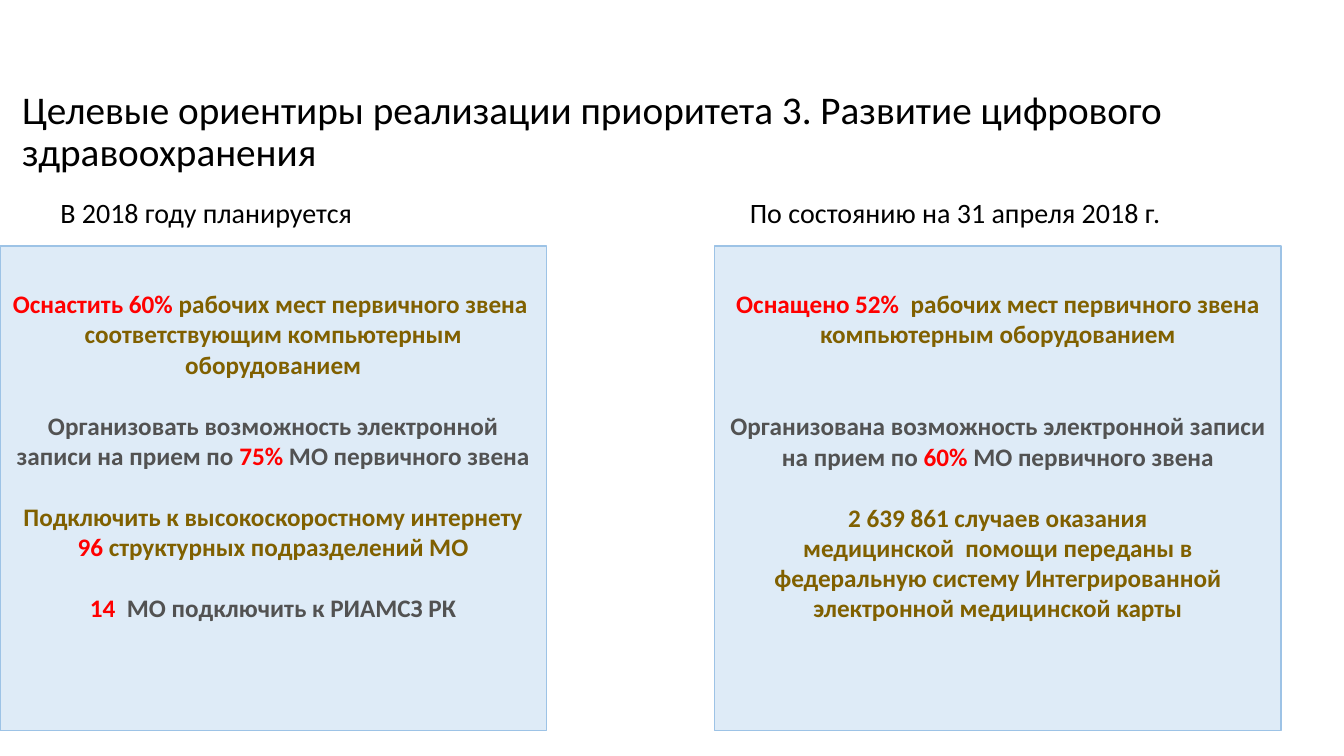
from dataclasses import dataclass
from lxml import etree
from pptx import Presentation
from pptx import util as u
from pptx.dml.color import RGBColor
from pptx.enum import shapes, text
from pptx.oxml import ns


@dataclass(frozen=True)
class Theme:
    font: str = "Calibri"
    black: str = "000000"
    red: str = "FF0000"
    gold: str = "806000"
    gray: str = "525252"
    fill: str = "DEEBF7"
    edge: str = "9DC3E6"
    head: int = 28
    label: int = 20
    body: int = 18


look = Theme()


def write(para, words, size=look.body, color=look.black, bold=False):
    run = para.add_run()
    run.text = words
    font = run.font
    font.name = look.font
    font.size = u.Pt(size)
    font.bold = bold
    font.color.rgb = RGBColor.from_string(color)


deck = Presentation()
deck.slide_width = u.Pt(960)
deck.slide_height = u.Pt(540)
slide = deck.slides.add_slide(deck.slide_layouts[5])

title = slide.shapes.title
title.left, title.top = u.Pt(8.6), u.Pt(64.8)
title.width, title.height = u.Pt(943.2), u.Pt(92.9)
frame = title.text_frame
frame.auto_size = text.MSO_AUTO_SIZE.NONE
frame.vertical_anchor = text.MSO_ANCHOR.TOP
frame.margin_top = u.Pt(0)
para = frame.paragraphs[0]
para.alignment = text.PP_ALIGN.LEFT
para.line_spacing = 0.9
write(para, "Целевые ориентиры реализации приоритета 3. Развитие цифрового здравоохранения",
      size=look.head)

label = slide.shapes.add_textbox(u.Pt(36), u.Pt(136.1), u.Pt(924), u.Pt(31.5))
label.text_frame.word_wrap = True
para = label.text_frame.paragraphs[0]
tabs = etree.SubElement(para._p.get_or_add_pPr(), ns.qn("a:tabLst"))
etree.SubElement(tabs, ns.qn("a:tab"), pos=str(u.Pt(492.5)), algn="l")
write(para, "В 2018 году планируется\tПо состоянию на 31 апреля 2018 г.", size=look.label)

row = 22
plan = [
    (0, [("Оснастить 60% ", look.red),
         ("рабочих мест первичного звена  соответствующим компьютерным оборудованием", look.gold)]),
    (row, [("Организовать возможность электронной записи на прием по ", look.gray),
           ("75%", look.red), (" МО первичного звена", look.gray)]),
    (row, [("Подключить к высокоскоростному интернету ", look.gold),
           ("96", look.red), (" структурных подразделений МО", look.gold)]),
    (row, [("14  ", look.red), ("МО подключить к РИАМСЗ РК", look.gray)]),
]
done = [
    (0, [("Оснащено 52%  ", look.red),
         ("рабочих мест первичного звена компьютерным оборудованием", look.gold)]),
    (2 * row, [("Организована возможность электронной записи на прием по ", look.gray),
               ("60% ", look.red), ("МО первичного звена", look.gray)]),
    (row, [("2 639 861 случаев оказания", look.gold)]),
    (0, [("медицинской  помощи переданы в федеральную систему Интегрированной "
          "электронной медицинской карты", look.gold)]),
]

for left, width, items in [(0, 390.2, plan), (510.5, 404.6, done)]:
    panel = slide.shapes.add_shape(shapes.MSO_SHAPE.RECTANGLE,
                                   u.Pt(left), u.Pt(175.7), u.Pt(width), u.Pt(346.3))
    panel.shadow.inherit = False
    panel.fill.solid()
    panel.fill.fore_color.rgb = RGBColor.from_string(look.fill)
    panel.line.color.rgb = RGBColor.from_string(look.edge)
    panel.line.width = u.Pt(1)
    frame = panel.text_frame
    frame.word_wrap = True
    frame.vertical_anchor = text.MSO_ANCHOR.TOP
    frame.margin_top = u.Pt(30.4)
    for rank, (gap, parts) in enumerate(items):
        para = frame.add_paragraph() if rank else frame.paragraphs[0]
        para.alignment = text.PP_ALIGN.CENTER
        if gap:
            para.space_before = u.Pt(gap)
        for words, color in parts:
            write(para, words, color=color, bold=True)

deck.save("out.pptx")
